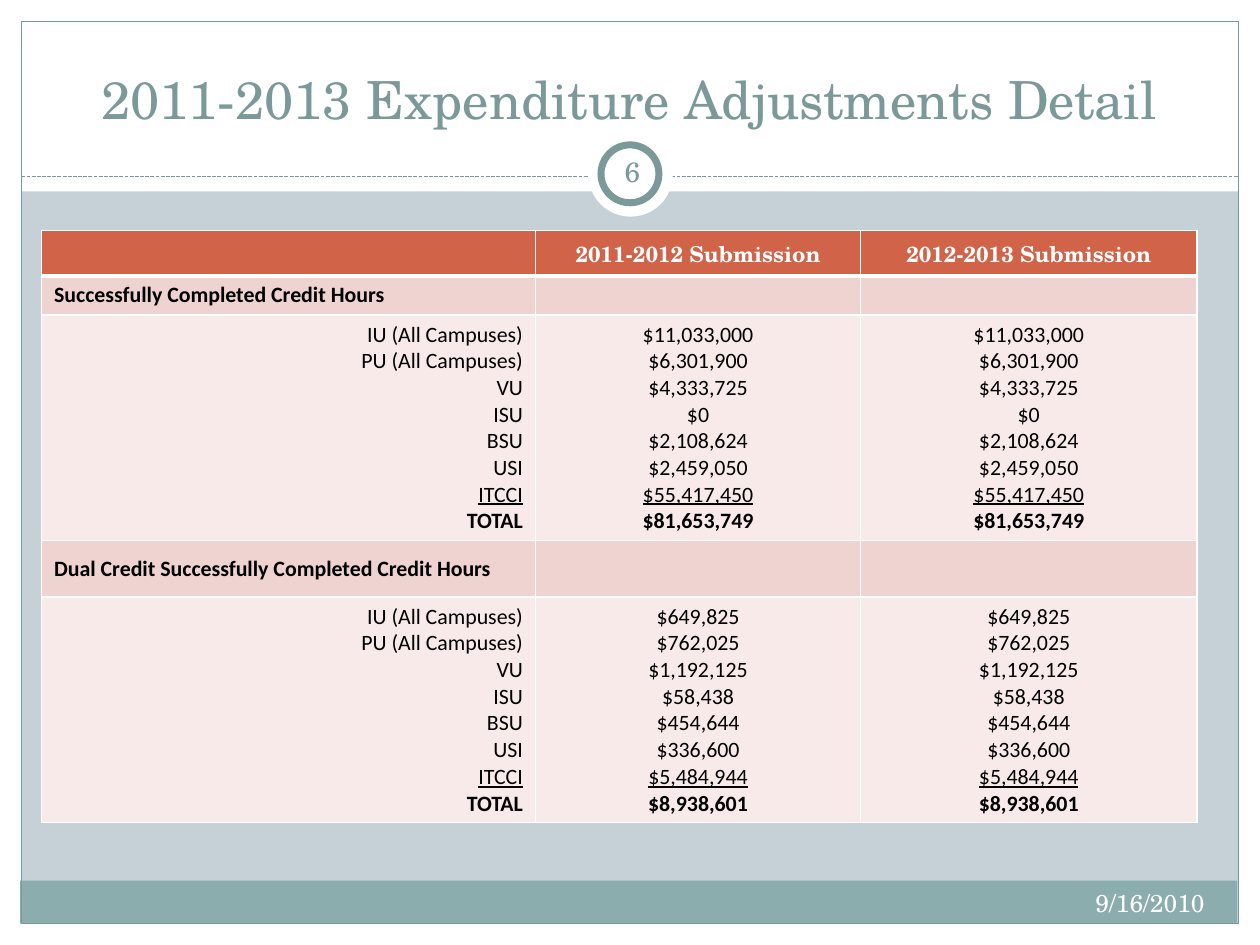
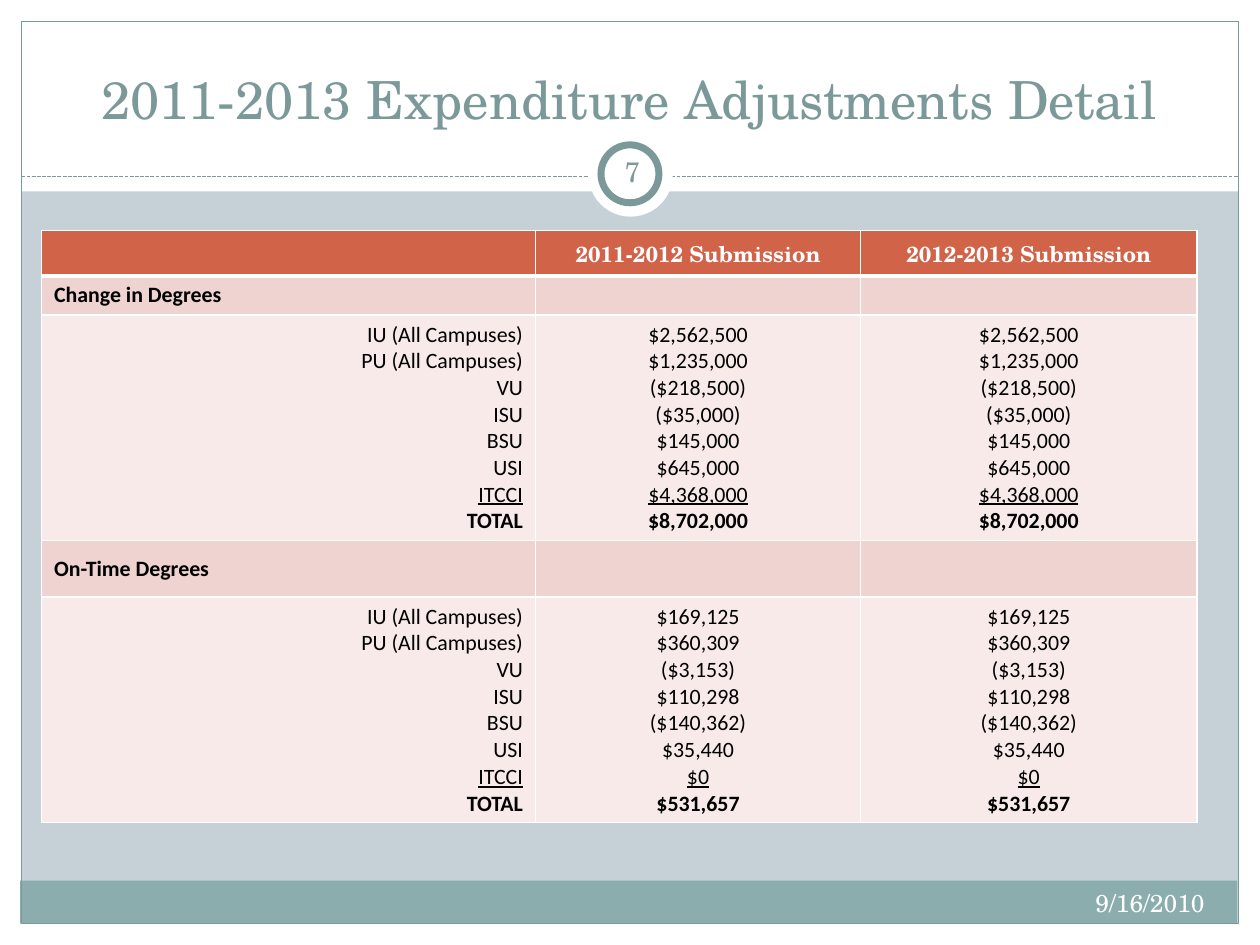
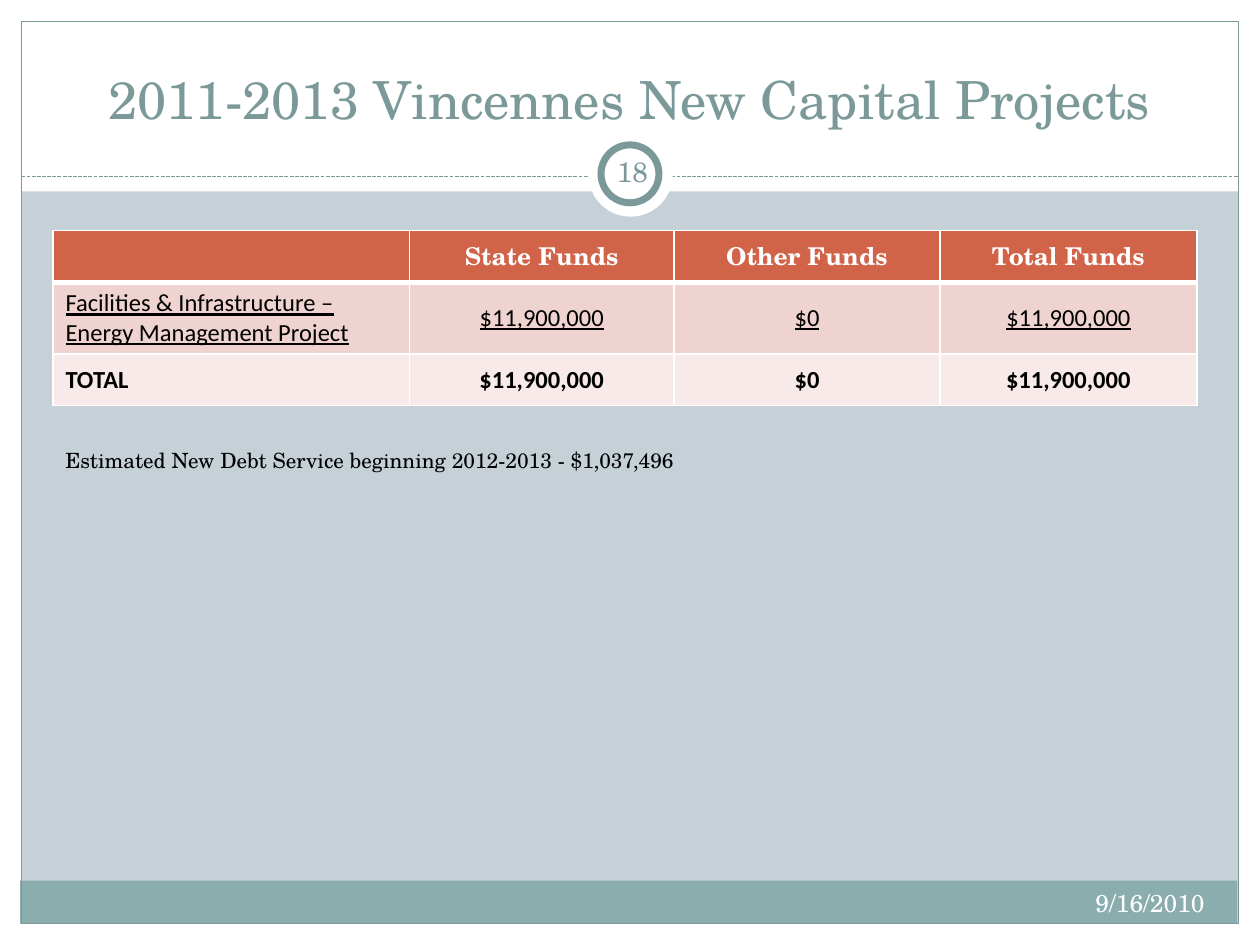
"""Budget slides: expenditure adjustments and new capital projects."""
import dataclasses

import lxml.etree
import pptx
import pptx.dml.color
import pptx.enum.dml
import pptx.enum.shapes
import pptx.enum.text
import pptx.oxml.ns
import pptx.util

Inches = pptx.util.Inches
SHAPE = pptx.enum.shapes.MSO_SHAPE
ALIGN = pptx.enum.text.PP_ALIGN
ANCHOR = pptx.enum.text.MSO_ANCHOR
qn = pptx.oxml.ns.qn


@dataclasses.dataclass(frozen=True)
class Theme:
    """Colours, fonts and type sizes of the deck."""
    background: str = "C5D1D7"
    paper: str = "FFFFFF"
    accent: str = "7C999A"
    footer: str = "8CADAE"
    header: str = "D16349"
    dark_row: str = "EED3D0"
    light_row: str = "F7EAE9"
    ink: str = "000000"
    serif: str = "TeX Gyre Schola"
    sans: str = "Calibri"
    title_size: float = 30
    number_size: float = 16
    date_size: float = 14
    detail_size: float = 12.5
    project_size: float = 14
    note_size: float = 12


THEME = Theme()
DATE = "9/16/2010"
CAMPUSES = ["IU (All Campuses)", "PU (All Campuses)", "VU", "ISU", "BSU", "USI", "ITCCI", "TOTAL"]
DETAIL_TITLE = "2011-2013 Expenditure Adjustments Detail"
DETAIL_HEADINGS = ["", "2011-2012 Submission", "2012-2013 Submission"]
DETAILS = {
    6: {
        "Successfully Completed Credit Hours": [
            "$11,033,000", "$6,301,900", "$4,333,725", "$0",
            "$2,108,624", "$2,459,050", "$55,417,450", "$81,653,749"],
        "Dual Credit Successfully Completed Credit Hours": [
            "$649,825", "$762,025", "$1,192,125", "$58,438",
            "$454,644", "$336,600", "$5,484,944", "$8,938,601"],
    },
    7: {
        "Change in Degrees": [
            "$2,562,500", "$1,235,000", "($218,500)", "($35,000)",
            "$145,000", "$645,000", "$4,368,000", "$8,702,000"],
        "On-Time Degrees": [
            "$169,125", "$360,309", "($3,153)", "$110,298",
            "($140,362)", "$35,440", "$0", "$531,657"],
    },
}
PROJECT_HEADINGS = ["", "State Funds", "Other Funds", "Total Funds"]
PROJECT_FUNDS = ["$11,900,000", "$0", "$11,900,000"]


def rgb(color):
    """Turn a hex string into a colour."""
    return pptx.dml.color.RGBColor.from_string(color)


def write(frame, text, size, font=THEME.serif, color=THEME.ink, align=ALIGN.LEFT,
          bold=False, underline=False):
    """Write one formatted paragraph, using the empty first one if it is free."""
    first = frame.paragraphs[0]
    paragraph = frame.add_paragraph() if first.runs else first
    paragraph.alignment = align
    run = paragraph.add_run()
    run.text = text
    run.font.size = pptx.util.Pt(size)
    run.font.name = font
    run.font.color.rgb = rgb(color)
    run.font.bold = bold
    run.font.underline = underline


def add_text(slide, box, text, anchor=ANCHOR.TOP, side_margin=0.1, **text_format):
    """Place a wrapped text box."""
    frame = slide.shapes.add_textbox(*map(Inches, box)).text_frame
    frame.word_wrap = True
    frame.vertical_anchor = anchor
    frame.margin_left = frame.margin_right = Inches(side_margin)
    write(frame, text, **text_format)


def add_panel(slide, box, fill=None, line_width=None, outline=SHAPE.RECTANGLE):
    """Place a flat shape with an optional fill and accent line."""
    panel = slide.shapes.add_shape(outline, *map(Inches, box))
    panel.shadow.inherit = False
    if fill:
        panel.fill.solid()
        panel.fill.fore_color.rgb = rgb(fill)
    else:
        panel.fill.background()
    if line_width:
        panel.line.color.rgb = rgb(THEME.accent)
        panel.line.width = pptx.util.Pt(line_width)
    else:
        panel.line.fill.background()


def add_divider(slide):
    """Draw the dashed line below the title."""
    divider = slide.shapes.add_connector(
        pptx.enum.shapes.MSO_CONNECTOR.STRAIGHT, *map(Inches, (0.17, 1.4, 9.83, 1.4)))
    divider.line.color.rgb = rgb(THEME.accent)
    divider.line.width = pptx.util.Pt(0.75)
    divider.line.dash_style = pptx.enum.dml.MSO_LINE.SQUARE_DOT
    lxml.etree.SubElement(divider._element.spPr, qn("a:effectLst"))


def add_framed_slide(deck, title, number):
    """Add a slide with the shared frame, title, number and date."""
    slide = deck.slides.add_slide(deck.slide_layouts[6])
    slide.background.fill.solid()
    slide.background.fill.fore_color.rgb = rgb(THEME.background)
    for margin in [(0, 7.33, 10, 0.17), (0, 0, 10, 1.52), (0, 0, 0.17, 7.5), (9.83, 0, 0.17, 7.5)]:
        add_panel(slide, margin, THEME.paper)
    add_panel(slide, (0.16, 6.99, 9.66, 0.34), THEME.footer)
    add_panel(slide, (0.17, 0.17, 9.66, 7.16), line_width=0.75)
    add_divider(slide)
    add_panel(slide, (4.67, 1.05, 0.67, 0.67), THEME.paper, outline=SHAPE.OVAL)
    add_panel(slide, (4.77, 1.15, 0.46, 0.46), THEME.paper, 4, SHAPE.OVAL)
    add_text(slide, (0.33, 0.25, 9.33, 0.83), title, ANCHOR.BOTTOM,
             size=THEME.title_size, color=THEME.accent, align=ALIGN.CENTER)
    add_text(slide, (6.33, 7, 3.33, 0.4), DATE,
             size=THEME.date_size, color=THEME.paper, align=ALIGN.RIGHT)
    add_text(slide, (4.77, 1.12, 0.5, 0.48), str(number), ANCHOR.MIDDLE, 0.05,
             size=THEME.number_size, color=THEME.accent, align=ALIGN.CENTER)
    return slide


def add_borders(cell, top=1, bottom=1):
    """Give a cell white borders, with widths in points."""
    properties = cell._tc.get_or_add_tcPr()
    for side, width in {"L": 1, "R": 1, "T": top, "B": bottom}.items():
        border = lxml.etree.SubElement(properties, qn(f"a:ln{side}"), w=str(pptx.util.Pt(width)))
        solid = lxml.etree.SubElement(border, qn("a:solidFill"))
        lxml.etree.SubElement(solid, qn("a:srgbClr"), val=THEME.paper)


def fill_cell(cell, lines, fill, size, anchor=ANCHOR.MIDDLE, top=1, bottom=1, **text_format):
    """Style a cell and write its lines, each a text with its own format."""
    add_borders(cell, top, bottom)
    cell.fill.solid()
    cell.fill.fore_color.rgb = rgb(fill)
    cell.vertical_anchor = anchor
    for text, line_format in lines:
        write(cell.text_frame, text, size, **text_format, **line_format)
    if not lines:
        lxml.etree.SubElement(cell.text_frame.paragraphs[0]._p, qn("a:endParaRPr"),
                              sz=str(int(size * 100)))


def add_budget_table(slide, left, widths, heights, headings, rows, size, label_align):
    """Add a table with a header row; each body row is a list of cells of lines."""
    table = slide.shapes.add_table(len(heights), len(widths), Inches(left), Inches(1.83),
                                   Inches(sum(widths)), Inches(sum(heights))).table
    table.first_row = table.horz_banding = False
    for column, width in zip(table.columns, widths):
        column.width = Inches(width)
    for row, height in zip(table.rows, heights):
        row.height = Inches(height)
    for column, heading in enumerate(headings):
        fill_cell(table.cell(0, column), [(heading, {"bold": True})] if heading else [],
                  THEME.header, size, ANCHOR.TOP, bottom=3, color=THEME.paper, align=ALIGN.CENTER)
    for index, row in enumerate(rows, 1):
        for column, lines in enumerate(row):
            align = ALIGN.CENTER if column else label_align[index % 2]
            fill_cell(table.cell(index, column), lines,
                      THEME.dark_row if index % 2 else THEME.light_row, size,
                      top=3 if index == 1 else 1, font=THEME.sans, align=align)


def sum_lines(texts):
    """Underline the last item before the total and embolden the total."""
    *items, last, total = texts
    return [(item, {}) for item in items] + [(last, {"underline": True}), (total, {"bold": True})]


def add_detail_slide(deck, number, sections):
    """Add a slide that lists the amounts of each section by campus."""
    slide = add_framed_slide(deck, DETAIL_TITLE, number)
    rows = []
    for section, amounts in sections.items():
        rows.append([[(section, {"bold": True})], [], []])
        rows.append([sum_lines(CAMPUSES), sum_lines(amounts), sum_lines(amounts)])
    add_budget_table(slide, 0.33, [3.92, 2.58, 2.67], [0.36, 0.31, 1.79, 0.45, 1.79],
                     DETAIL_HEADINGS, rows, THEME.detail_size, (ALIGN.RIGHT, ALIGN.LEFT))


def add_project_slide(deck):
    """Add the slide of new capital projects and their debt service."""
    slide = add_framed_slide(deck, "2011-2013 Vincennes New Capital Projects", 18)
    project = ["Facilities & Infrastructure – Energy Management Project", *PROJECT_FUNDS]
    rows = [[[(text, {"underline": True})] for text in project],
            [[(text, {"bold": True})] for text in ["TOTAL", *PROJECT_FUNDS]]]
    add_budget_table(slide, 0.42, [2.83, 2.1, 2.11, 2.04], [0.41, 0.57, 0.41],
                     PROJECT_HEADINGS, rows, THEME.project_size, (ALIGN.LEFT, ALIGN.LEFT))
    add_text(slide, (0.42, 3.5, 8.58, 0.5),
             "Estimated New Debt Service beginning 2012-2013 - $1,037,496", size=THEME.note_size)


def main():
    """Build and save the deck."""
    deck = pptx.Presentation()
    deck.slide_width, deck.slide_height = Inches(10), Inches(7.5)
    for number, sections in DETAILS.items():
        add_detail_slide(deck, number, sections)
    add_project_slide(deck)
    deck.save("out.pptx")


if __name__ == "__main__":
    main()
